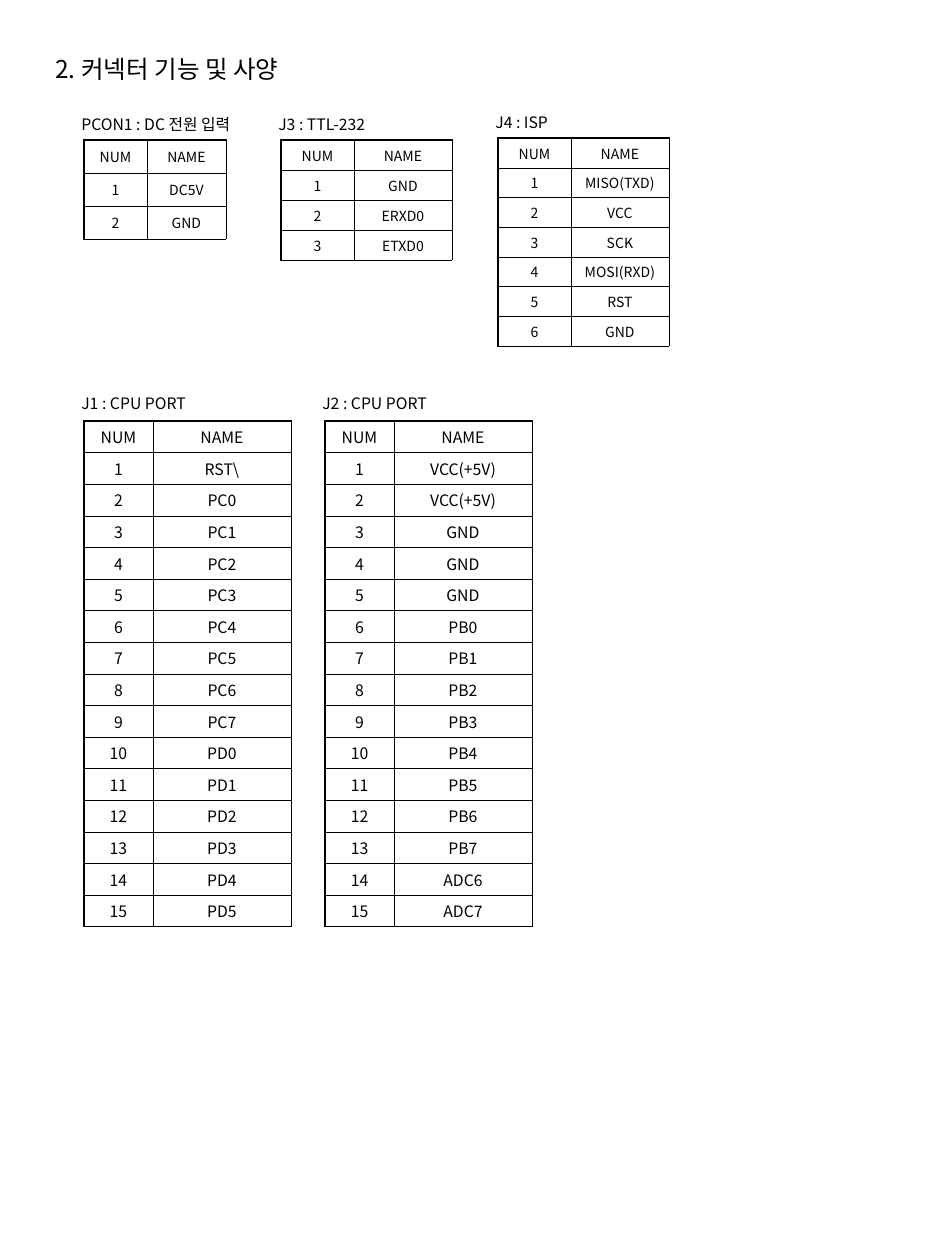
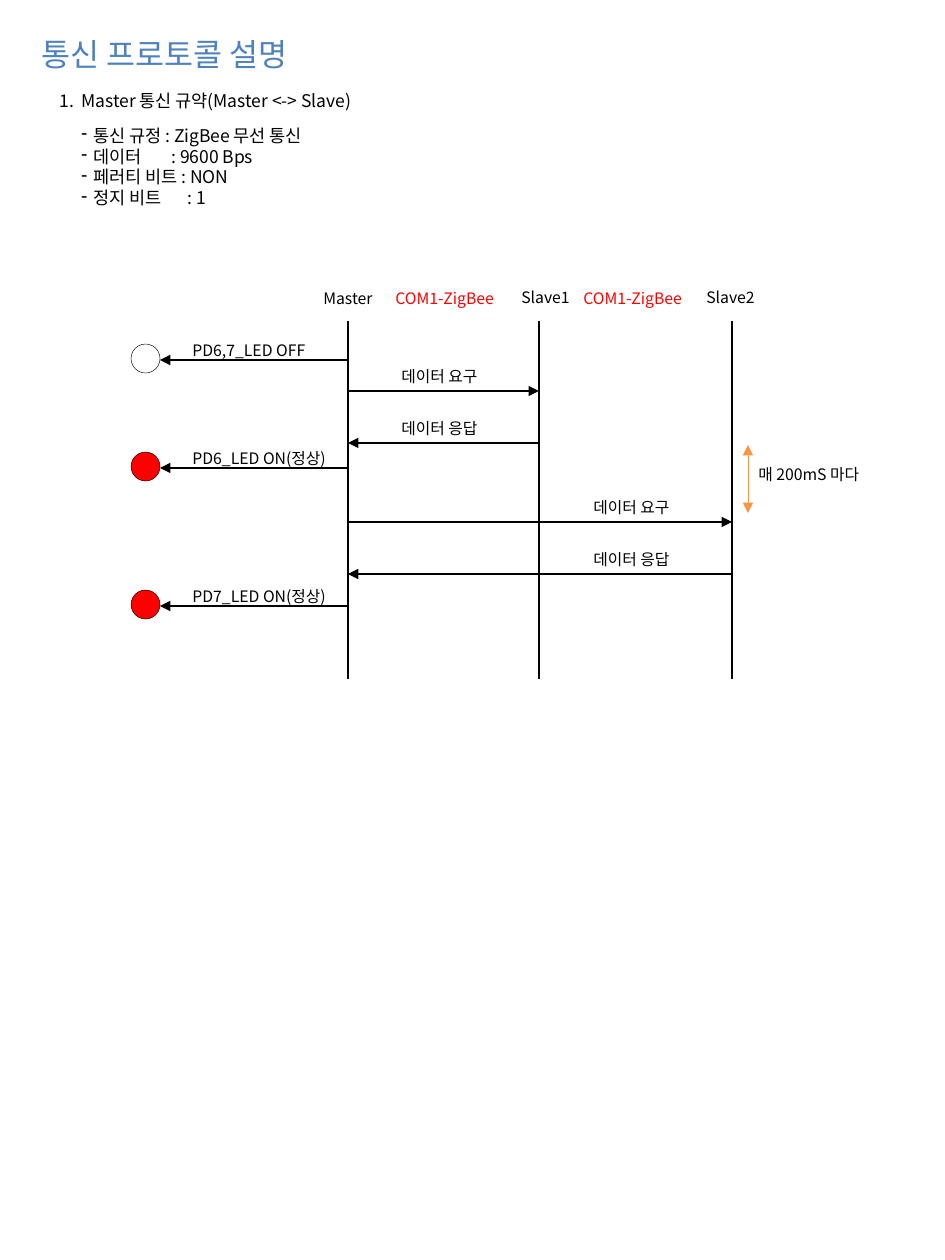
from lxml import etree
from pptx import Presentation
from pptx.dml.color import RGBColor
from pptx.enum.shapes import MSO_CONNECTOR, MSO_SHAPE
from pptx.enum.text import MSO_ANCHOR, PP_ALIGN
from pptx.oxml.ns import qn
from pptx.util import Pt

PX = 914400 / 126
FONT = "Noto Sans CJK KR"
BLACK, RED, BLUE, ORANGE = "000000", "FF0000", "4F81BD", "F79646"
LEFT, CENTER, JUSTIFY = PP_ALIGN.LEFT, PP_ALIGN.CENTER, PP_ALIGN.JUSTIFY
TOP, MIDDLE = MSO_ANCHOR.TOP, MSO_ANCHOR.MIDDLE
STRAIGHT, OVAL = MSO_CONNECTOR.STRAIGHT, MSO_SHAPE.OVAL
THIN, THICK = 0.25, 1


def emu(px):
    return round(px * PX)


def rgb(code):
    return RGBColor.from_string(code)


def sub(node, tag, **attrs):
    return etree.SubElement(node, qn(tag), {k: str(v) for k, v in attrs.items()})


class Deck:
    def __init__(self, wide, high):
        self.prs = Presentation()
        self.prs.slide_width, self.prs.slide_height = emu(wide), emu(high)
        self.slide = None

    def page(self):
        self.slide = self.prs.slides.add_slide(self.prs.slide_layouts[6])

    def run(self, para, text, size, color=BLACK):
        run = para.add_run()
        run.text = text
        run.font.size, run.font.name = Pt(size), FONT
        run.font.color.rgb = rgb(color)
        sub(run.font._element, "a:ea", typeface=FONT)

    def text(self, box, text, size=9, color=BLACK, align=LEFT, anchor=MIDDLE):
        frame = self.slide.shapes.add_textbox(*map(emu, box)).text_frame
        frame.word_wrap, frame.vertical_anchor = True, anchor
        para = frame.paragraphs[0]
        para.alignment = align
        para.line_spacing = Pt(size * 1.2)
        self.run(para, text, size, color)
        return frame

    def tab(self, para, stop):
        tabs = sub(para._p.get_or_add_pPr(), "a:tabLst")
        sub(tabs, "a:tab", pos=emu(stop), algn="l")

    def dashes(self, box, rows, size):
        """Dashed list; each row is a text and a tab stop or None."""
        frame = self.slide.shapes.add_textbox(*map(emu, box)).text_frame
        frame.word_wrap, frame.vertical_anchor = True, MIDDLE
        for i, (text, stop) in enumerate(rows):
            para = frame.add_paragraph() if i else frame.paragraphs[0]
            para.line_spacing = Pt(size * 1.2)
            props = para._p.get_or_add_pPr()
            props.set("marL", str(emu(12)))
            props.set("indent", str(-emu(12)))
            sub(props, "a:buChar", char="-")
            if stop:
                self.tab(para, stop)
            self.run(para, text, size)

    def edge(self, cell, tag, width):
        line = sub(cell._tc.get_or_add_tcPr(), tag, w=Pt(width))
        sub(sub(line, "a:solidFill"), "a:srgbClr", val=BLACK)

    def table(self, x, y, cols, high, names, size):
        """Pin table: a header, then one numbered row per name."""
        rows = [("NUM", "NAME")] + [(str(i), n) for i, n in enumerate(names, 1)]
        box = map(emu, (x, y, sum(cols), high))
        grid = self.slide.shapes.add_table(len(rows), len(cols), *box).table
        grid.first_row = grid.horz_banding = False
        for col, wide in zip(grid.columns, cols):
            col.width = emu(wide)
        for r, row in enumerate(rows):
            grid.rows[r].height = emu(high / len(rows))
            for c, text in enumerate(row):
                cell = grid.cell(r, c)
                cell.margin_top = cell.margin_bottom = 0
                cell.margin_left = cell.margin_right = emu(4)
                cell.vertical_anchor = MIDDLE
                para = cell.text_frame.paragraphs[0]
                para.alignment = CENTER
                self.run(para, text, size)
                self.edge(cell, "a:lnL", THIN if c else THICK)
                self.edge(cell, "a:lnR", THIN)
                self.edge(cell, "a:lnT", THIN if r else THICK)
                self.edge(cell, "a:lnB", THIN)
                cell.fill.background()

    def line(self, x1, y1, x2, y2, color=BLACK, width=0.75, ends=()):
        ends_at = map(emu, (x1, y1, x2, y2))
        line = self.slide.shapes.add_connector(STRAIGHT, *ends_at)
        line.line.color.rgb, line.line.width = rgb(color), Pt(width)
        for tag in ends:
            sub(line.line._get_or_add_ln(), tag, type="triangle")
        sub(line._element.spPr, "a:effectLst")

    def lamp(self, x, y, size, fill):
        dot = self.slide.shapes.add_shape(OVAL, *map(emu, (x, y, size, size)))
        dot.shadow.inherit = False
        if fill:
            dot.fill.solid()
            dot.fill.fore_color.rgb = rgb(fill)
        else:
            dot.fill.background()
        dot.line.color.rgb, dot.line.width = rgb(BLACK), Pt(THIN)


def pins(deck):
    deck.page()
    deck.text((43, 47, 277, 43), "2. 커넥터 기능 및 사양", 14)
    small, large = (73, 98), (69, 138)
    cpu1 = ["RST\\"] + [f"PC{i}" for i in range(8)] + [f"PD{i}" for i in range(6)]
    cpu2 = ["VCC(+5V)"] * 2 + ["GND"] * 3 + [f"PB{i}" for i in range(8)]
    cpu2 += ["ADC6", "ADC7"]
    isp = ["MISO(TXD)", "VCC", "SCK", "MOSI(RXD)", "RST", "GND"]
    ports = [
        ("PCON1 : DC 전원 입력", 84, 140, 32, (63, 79), 99, ["DC5V", "GND"], 8),
        ("J3 : TTL-232", 281, 140, 32, small, 120, ["GND", "ERXD0", "ETXD0"], 8),
        ("J4 : ISP", 498, 138, 32, small, 208, isp, 8),
        ("J1 : CPU PORT", 84, 421, 34, large, 506, cpu1, 9),
        ("J2 : CPU PORT", 325, 421, 34, large, 506, cpu2, 9),
    ]
    for name, x, y, rise, cols, high, names, size in ports:
        deck.text((x - 15, y - rise, 212, 32), name)
        deck.table(x, y, cols, high, names, size)


def talk(deck):
    deck.page()
    deck.text((29, 29, 374, 50), "통신 프로토콜 설명", 18, BLUE)
    head = deck.text((47, 84, 445, 34), "1.\tMaster 통신 규약(Master <-> Slave)", 10)
    deck.tab(head.paragraphs[0], 22)
    rules = [("통신 규정 : ZigBee 무선 통신", None), ("데이터\t: 9600 Bps", 90),
             ("페러티 비트 : NON", None), ("정지 비트\t: 1", 106)]
    deck.dashes((69, 118, 379, 97), rules, 10)

    master, slave1, slave2 = 348, 539, 732
    names = [("Master", 311, 283, BLACK), ("COM1-ZigBee", 383, 283, RED),
             ("Slave1", 509, 282, BLACK), ("COM1-ZigBee", 571, 283, RED),
             ("Slave2", 694, 282, BLACK)]
    for name, x, y, color in names:
        deck.text((x, y, 139, 34), name, 9, color, JUSTIFY, TOP)
    for x in (master, slave1, slave2):
        deck.line(x, 321, x, 679)

    ask, reply = "데이터 요구", "데이터 응답"
    calls = [(master, slave1, 391, ask, 389), (slave1, master, 443, reply, 389),
             (master, slave2, 522, ask, 581), (slave2, master, 574, reply, 581)]
    for start, end, y, name, x in calls:
        deck.line(start, y, end, y, ends=["a:tailEnd"])
        deck.text((x, y - 30, 122, 30), name, 9, BLACK, JUSTIFY, TOP)

    lamps = [(360, "PD6,7_LED OFF", None), (468, "PD6_LED ON(정상)", RED),
             (606, "PD7_LED ON(정상)", RED)]
    for y, name, fill in lamps:
        deck.lamp(131, y - 16, 29, fill)
        deck.line(master, y, 160, y, ends=["a:tailEnd"])
        deck.text((180, y - 25, 168, 29), name, 9, BLACK, JUSTIFY, TOP)

    deck.line(748, 445, 748, 513, ORANGE, THIN, ["a:headEnd", "a:tailEnd"])
    deck.text((746, 459, 131, 35), "매 200mS 마다", 9, BLACK, JUSTIFY, TOP)


def main():
    deck = Deck(945, 1260)
    pins(deck)
    talk(deck)
    deck.prs.save("out.pptx")


if __name__ == "__main__":
    main()
